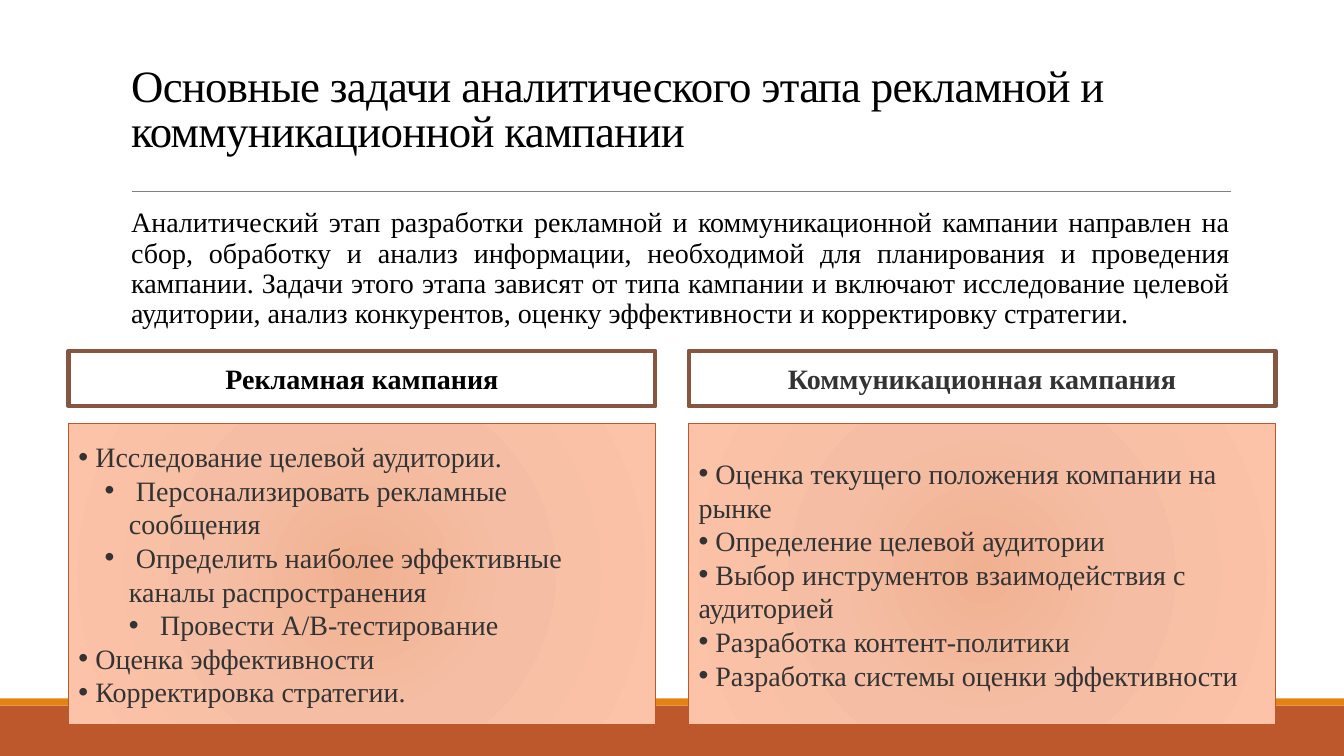
import pptx
import pptx.dml.color
import pptx.enum.shapes
import pptx.enum.text
import pptx.oxml
import pptx.oxml.ns
import pptx.util
from lxml import etree

Inches = pptx.util.Inches
Pt = pptx.util.Pt
RECTANGLE = pptx.enum.shapes.MSO_SHAPE.RECTANGLE
MIDDLE = pptx.enum.text.MSO_ANCHOR.MIDDLE
ALIGN = pptx.enum.text.PP_ALIGN


def color(hex_value):
    return pptx.dml.color.RGBColor.from_string(hex_value)


def add_text(paragraph, text, size, hex_value, bold=False):
    run = paragraph.add_run()
    run.text = text
    run.font.name = "Times New Roman"
    run.font.size = Pt(size)
    run.font.bold = bold
    run.font.color.rgb = color(hex_value)
    return run


presentation = pptx.Presentation()
presentation.slide_width = Inches(13.33)
presentation.slide_height = Inches(7.5)
slide = presentation.slides.add_slide(presentation.slide_layouts[1])

# Bottom bands
for top, height, fill in [(7, 0.5, "BD582C"), (6.93, 0.07, "E48312")]:
    band = slide.shapes.add_shape(RECTANGLE, 0, Inches(top), Inches(13.33), Inches(height))
    band.shadow.inherit = False
    band.fill.solid()
    band.fill.fore_color.rgb = color(fill)
    band.line.fill.background()

# Rule under the title
rule = slide.shapes.add_connector(
    pptx.enum.shapes.MSO_CONNECTOR.STRAIGHT,
    Inches(1.31), Inches(1.9), Inches(12.21), Inches(1.9))
rule.line.color.rgb = color("808080")
rule.line.width = Pt(0.5)
etree.SubElement(rule.element.spPr, pptx.oxml.ns.qn("a:effectLst"))

# Title and introduction
title = slide.shapes.title
introduction = slide.placeholders[1]
for placeholder, top, height in [(title, 0.31, 1.59), (introduction, 2.02, 1.73)]:
    placeholder.left, placeholder.top = Inches(1.2), Inches(top)
    placeholder.width, placeholder.height = Inches(11), Inches(height)
    placeholder.text_frame.auto_size = pptx.enum.text.MSO_AUTO_SIZE.NONE

title.text_frame.vertical_anchor = MIDDLE
paragraph = title.text_frame.paragraphs[0]
paragraph.alignment = ALIGN.LEFT
paragraph.line_spacing = 0.85
run = add_text(
    paragraph,
    "Основные задачи аналитического этапа рекламной и коммуникационной кампании",
    32, "000000")
run.font._element.set("spc", "-50")

introduction.text_frame.margin_left = introduction.text_frame.margin_right = 0
paragraph = introduction.text_frame.paragraphs[0]
paragraph.alignment = ALIGN.JUSTIFY
paragraph.line_spacing = 0.9
paragraph.space_before = Pt(0)
properties = paragraph._p.get_or_add_pPr()
properties.set("marL", str(Inches(0.1)))
properties.set("indent", "0")
etree.SubElement(properties, pptx.oxml.ns.qn("a:buNone"))
add_text(
    paragraph,
    "Аналитический этап разработки рекламной и коммуникационной кампании направлен на "
    "сбор, обработку и анализ информации, необходимой для планирования и проведения "
    "кампании. Задачи этого этапа зависят от типа кампании и включают исследование "
    "целевой аудитории, анализ конкурентов, оценку эффективности и корректировку стратегии.",
    20, "000000")

# Campaign columns: each task has a level, left margin, first-line indent and text
MAIN = (0, 0, 0)
DETAIL = (1, 0.5, -0.24)
TEST = (1, 0.81, -0.31)
campaigns = [
    ("Рекламная кампания", "000000", [
        (MAIN, " Исследование целевой аудитории."),
        (DETAIL, " Персонализировать рекламные сообщения"),
        (DETAIL, " Определить наиболее эффективные каналы распространения"),
        (TEST, "Провести A/B-тестирование"),
        (MAIN, " Оценка эффективности"),
        (MAIN, " Корректировка стратегии."),
    ]),
    ("Коммуникационная кампания", "333333", [
        (MAIN, " Оценка текущего положения компании на рынке"),
        (MAIN, " Определение целевой аудитории"),
        (MAIN, " Выбор инструментов взаимодействия с аудиторией"),
        (MAIN, " Разработка контент-политики"),
        (MAIN, " Разработка системы оценки эффективности"),
    ]),
]
gradient_stops = "".join(
    f'<a:gs pos="{position * 1000}"><a:srgbClr val="{stop}"/></a:gs>'
    for position, stop in [(0, "F0B191"), (45, "F5BEA4"), (100, "FDC3A8")])
gradient = (
    f'<a:gradFill {pptx.oxml.ns.nsdecls("a")}><a:gsLst>{gradient_stops}</a:gsLst>'
    '<a:path path="circle"><a:fillToRect l="100000" t="100000" r="100000" b="100000"/>'
    '</a:path></a:gradFill>')

for column, (heading, heading_color, tasks) in enumerate(campaigns):
    left = Inches(0.68 + column * 6.15)
    header = slide.shapes.add_shape(RECTANGLE, left, Inches(3.48), Inches(5.82), Inches(0.55))
    panel = slide.shapes.add_shape(RECTANGLE, left, Inches(4.2), Inches(5.82), Inches(2.99))
    for shape, outline, width in [(header, "865640", 3), (panel, "BD582C", 1)]:
        shape.shadow.inherit = False
        shape.line.color.rgb = color(outline)
        shape.line.width = Pt(width)
        shape.text_frame.word_wrap = True
        shape.text_frame.vertical_anchor = MIDDLE

    # Heading
    header.fill.solid()
    header.fill.fore_color.rgb = color("FFFFFF")
    paragraph = header.text_frame.paragraphs[0]
    paragraph.alignment = ALIGN.CENTER
    add_text(paragraph, heading, 20, heading_color, bold=True)

    # Task list on a radial gradient
    panel.element.spPr.insert(2, pptx.oxml.parse_xml(gradient))
    for index, ((level, margin, indent), task) in enumerate(tasks):
        frame = panel.text_frame
        paragraph = frame.add_paragraph() if index else frame.paragraphs[0]
        paragraph.alignment = ALIGN.LEFT
        paragraph.level = level
        properties = paragraph._p.get_or_add_pPr()
        properties.set("marL", str(Inches(margin)))
        properties.set("indent", str(Inches(indent)))
        etree.SubElement(properties, pptx.oxml.ns.qn("a:buFont"), typeface="Arial")
        etree.SubElement(properties, pptx.oxml.ns.qn("a:buChar"), char="•")
        add_text(paragraph, task, 20, "333333")

presentation.save("out.pptx")
